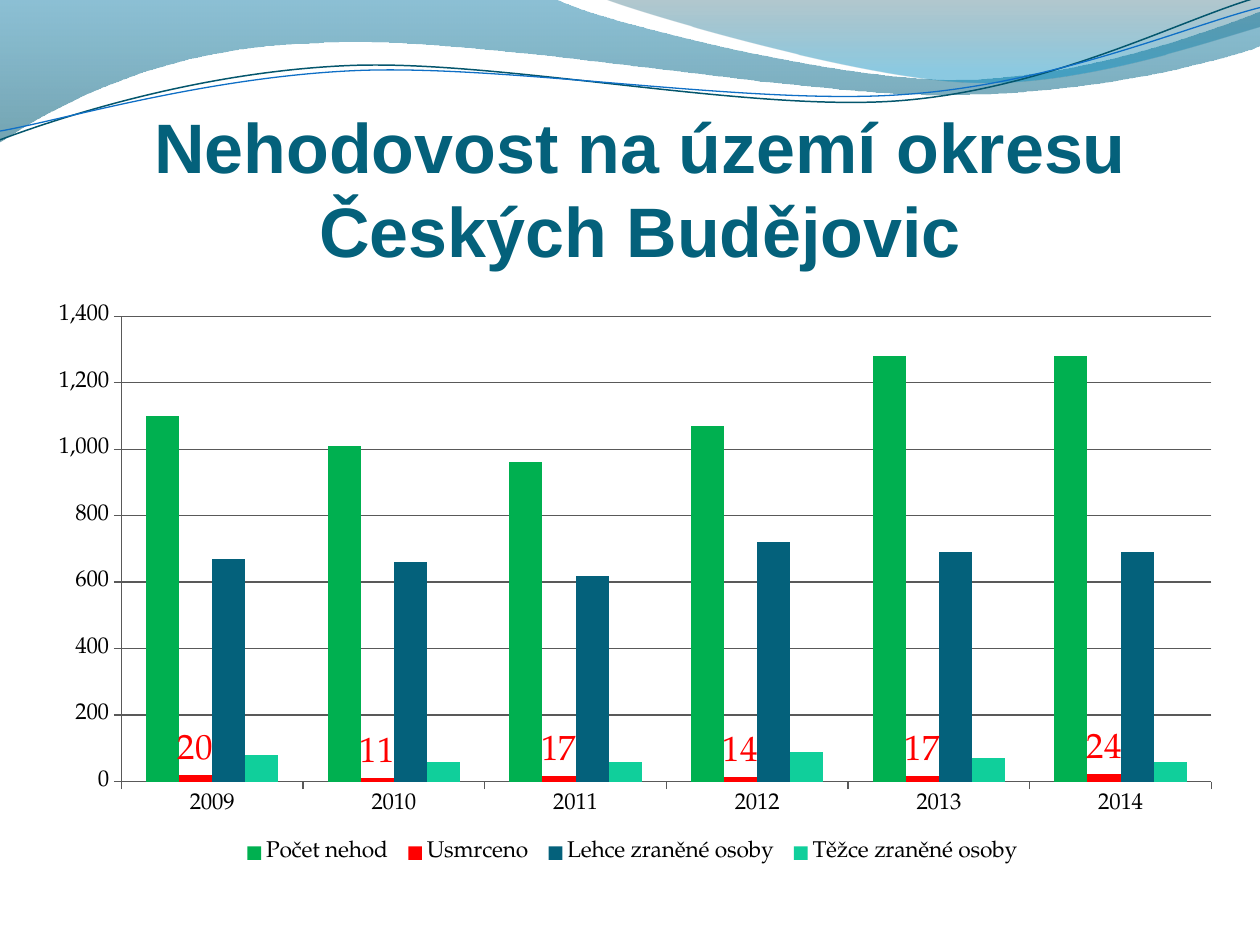
"""Build a slide with a wave header, a title and a column chart of road accidents by year."""
import math

import lxml.etree
import pptx
import pptx.chart.data
import pptx.dml.color
import pptx.enum.chart
import pptx.enum.text
import pptx.oxml.ns
import pptx.util

RGB = pptx.dml.color.RGBColor
TEAL = RGB(0x04, 0x61, 0x7B)
GREEN = RGB(0x00, 0xB0, 0x50)
RED = RGB(0xFF, 0x00, 0x00)
MINT = RGB(0x10, 0xCF, 0x9B)
BLACK = RGB(0x00, 0x00, 0x00)
GREY = RGB(0x59, 0x59, 0x59)
WAVE_TOP = RGB(0x00, 0x74, 0xA1)
WAVE_BOTTOM = RGB(0x00, 0x5A, 0x73)
CREST_TOP = RGB(0x00, 0x49, 0x5E)
CREST_BOTTOM = RGB(0x00, 0x8B, 0xBF)
DARK_LINE = RGB(0x04, 0x56, 0x6D)
BLUE_LINE = RGB(0x0F, 0x6F, 0xC6)
CHART_FONT = "TeX Gyre Pagella"
CELL = pptx.util.Inches(0.1)
COLUMNS, ROWS = 100, 75
TILT = 2.7

deck = pptx.Presentation()
deck.slide_width, deck.slide_height = COLUMNS * CELL, ROWS * CELL
page = deck.slides.add_slide(deck.slide_layouts[6])


def trace(start, pieces, close, tilt=0, pivot=(0, 0)):
    """Add an outline of lines (one point) and cubic curves (three points), in grid cells."""
    sine, cosine = math.sin(math.radians(tilt)), math.cos(math.radians(tilt))
    points = []
    for x, y in [start, *(point for piece in pieces for point in piece)]:
        across, down = x - pivot[0], y - pivot[1]
        points.append((round((pivot[0] + across * cosine - down * sine) * CELL),
                       round((pivot[1] + across * sine + down * cosine) * CELL)))
    builder = page.shapes.build_freeform(*points[0])
    builder.add_line_segments(points[1:], close=close)
    outline = builder.convert_to_shape()
    outline.shadow.inherit = False
    outline.rotation = -tilt % 360
    segments = iter(outline.element.findall(".//" + pptx.oxml.ns.qn("a:lnTo")))
    for piece in pieces:
        parts = [next(segments) for point in piece]
        if len(parts) == 3:
            curve = lxml.etree.Element(pptx.oxml.ns.qn("a:cubicBezTo"))
            parts[0].addprevious(curve)
            for part in parts:
                curve.append(part[0])
                part.getparent().remove(part)
    return outline


def write_text(text, left, top, width, height, font, size, color, bold, align, anchor):
    """Add a wrapped text box, placed in grid cells."""
    box = page.shapes.add_textbox(*(round(cells * CELL) for cells in (left, top, width, height)))
    frame = box.text_frame
    frame.word_wrap = True
    frame.vertical_anchor = anchor
    frame.margin_left = frame.margin_right = frame.margin_bottom = 0
    para = frame.paragraphs[0]
    para.alignment = align
    span = para.add_run()
    span.text = text
    span.font.name, span.font.size, span.font.bold = font, pptx.util.Pt(size), bold
    span.font.color.rgb = color


waves = [
    ((0, 0), [
        [(44, -0.1)],
        [(47.6, 1.7), (66.4, 6.3), (75.8, 6.3)],
        [(85.3, 6.3), (95.8, 2.6), (100, 0.9)],
        [(100.1, 3.6)],
        [(98.3, 4.4), (87, 7.6), (74.6, 7.5)],
        [(62.2, 7.5), (38.2, 2.8), (25.7, 3.4)],
        [(12.9, 3.6), (4.6, 8.3), (-0.1, 11.3)],
        [(0, 0)],
    ], [(0, WAVE_TOP, 45), (1, WAVE_BOTTOM, 55)]),
    ((47.9, -0.1), [
        [(50.9, 1.1), (68.2, 6.2), (76.9, 6.5)],
        [(85.6, 6.9), (96.1, 3.2), (100, 2.1)],
        [(100, 0)],
        [(47.9, -0.1)],
    ], [(0, CREST_TOP, 30), (0.8, CREST_BOTTOM, 45)]),
]
for start, pieces, stops in waves:
    wave = trace(start, pieces, True)
    wave.line.fill.background()
    wave.fill.gradient()
    wave.fill.gradient_angle = 270
    for stop, (position, color, opacity) in zip(wave.fill.gradient_stops, stops):
        stop.position = position
        stop.color.rgb = color
    tints = wave.element.spPr.findall(".//" + pptx.oxml.ns.qn("a:srgbClr"))
    for tint, (position, color, opacity) in zip(tints, stops):
        lxml.etree.SubElement(tint, pptx.oxml.ns.qn("a:alpha")).set("val", str(opacity * 1000))

ripples = [
    ((0, 11.1), [
        [(4.8, 9.3), (15.8, 5.7), (27.7, 5.2)],
        [(39.5, 4.7), (59.3, 8.9), (71.3, 8)],
        [(83.3, 7.1), (93.8, 1.5), (99.8, -0.2)],
    ], DARK_LINE, 0.85, (49.9, 5.75)),
    ((0, 10.4), [
        [(4.7, 9.6), (16.4, 6.1), (28.3, 5.6)],
        [(40.3, 5.1), (59.7, 8.4), (71.7, 7.5)],
        [(83.6, 6.7), (94.1, 2.1), (100, 0.6)],
    ], BLUE_LINE, 0.75, (49.95, 5.9)),
]
for start, pieces, color, width, pivot in ripples:
    ripple = trace(start, pieces, False, tilt=TILT, pivot=pivot)
    ripple.fill.background()
    ripple.line.color.rgb = color
    ripple.line.width = pptx.util.Pt(width)

write_text("Nehodovost na území okresu Českých Budějovic", left=5.9, top=14.65, width=89.8, height=6.9,
           font="Arial", size=40, color=TEAL, bold=True,
           align=pptx.enum.text.PP_ALIGN.CENTER, anchor=pptx.enum.text.MSO_ANCHOR.BOTTOM)

series_rows = [
    ("Počet nehod ", (1100, 1010, 960, 1070, 1280, 1280), GREEN),
    ("Usmrceno ", (20, 11, 17, 14, 17, 24), RED),
    ("Lehce zraněné osoby ", (670, 660, 620, 720, 690, 690), TEAL),
    ("Těžce zraněné osoby ", (80, 60, 60, 90, 70, 60), MINT),
]
data = pptx.chart.data.CategoryChartData()
data.categories = [str(year) for year in range(2009, 2015)]
for name, values, color in series_rows:
    data.add_series(name, values)
chart = page.shapes.add_chart(
    pptx.enum.chart.XL_CHART_TYPE.COLUMN_CLUSTERED,
    *(round(cells * CELL) for cells in (2.75, 23.3, 95.3, 45.7)), data).chart
chart.has_title = False
chart.font.name, chart.font.size = CHART_FONT, pptx.util.Pt(10)
chart.font.color.rgb = BLACK
chart.has_legend = True
chart.legend.position = pptx.enum.chart.XL_LEGEND_POSITION.BOTTOM
chart.legend.include_in_layout = False

for part in (chart.legend, chart.category_axis.tick_labels, chart.value_axis.tick_labels):
    part.font.name, part.font.size = CHART_FONT, pptx.util.Pt(13)
    part.font.color.rgb = BLACK
scale = chart.value_axis
for axis in (chart.category_axis, scale):
    axis.major_tick_mark = pptx.enum.chart.XL_TICK_MARK.OUTSIDE
for ruled in (chart.category_axis, scale, scale.major_gridlines):
    ruled.format.line.color.rgb = GREY
    ruled.format.line.width = pptx.util.Pt(0.75)
scale.minimum_scale, scale.maximum_scale, scale.major_unit = 0, 1400, 200
scale.tick_labels.number_format = "#,##0"
scale.tick_labels.number_format_is_linked = False

plot = chart.plots[0]
plot.vary_by_categories = False
plot.gap_width, plot.overlap = 150, 0
for series, (name, values, color) in zip(plot.series, series_rows):
    series.format.fill.solid()
    series.format.fill.fore_color.rgb = color
labels = plot.series[1].data_labels
labels.show_value = True
labels.position = pptx.enum.chart.XL_LABEL_POSITION.OUTSIDE_END
labels.font.name, labels.font.size = CHART_FONT, pptx.util.Pt(20)
labels.font.color.rgb = RED

deck.save("out.pptx")
